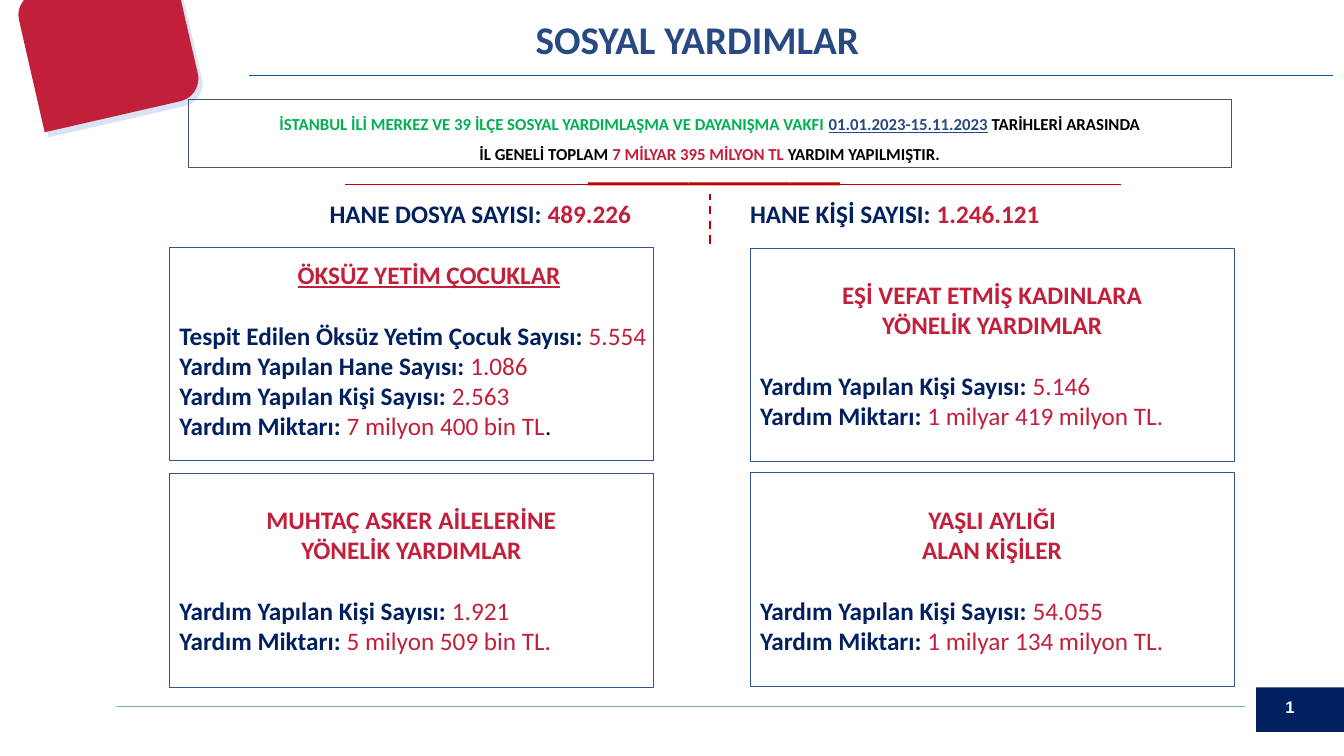
"""Build the social assistance summary slide."""
from dataclasses import dataclass
from typing import Any

import lxml.etree
import pptx
import pptx.dml.color
import pptx.enum.dml
import pptx.enum.shapes
import pptx.enum.text
import pptx.oxml.ns
import pptx.util

Inches = pptx.util.Inches
Pt = pptx.util.Pt
Shapes = pptx.enum.shapes.MSO_SHAPE
CENTER = pptx.enum.text.PP_ALIGN.CENTER

NAVY, CRIMSON, RED, BLUE = "002060", "C21F3A", "C00000", "294983"
GREEN, BLACK, WHITE, BORDER = "00B050", "000000", "FFFFFF", "325491"


@dataclass
class Span:
    text: str
    color: str
    bold: bool = True
    underline: bool = False


@dataclass
class Line:
    start: tuple[float, float]
    end: tuple[float, float]
    color: str
    width: float
    dashed: bool = False


@dataclass
class Panel:
    left: float
    top: float
    text_top: float
    text_width: float
    heading: list[str]
    figures: list[tuple[str, str]]
    underline: bool = False
    full_stop: bool = False


def rgb(color: str) -> pptx.dml.color.RGBColor:
    """Turn a hex string into a colour."""
    return pptx.dml.color.RGBColor.from_string(color)


def add_block(page: Any, kind: Any, left: float, top: float, width: float, height: float,
              fill: str | None = None, line: str | None = None, weight: float = 0.5) -> Any:
    """Draw a preset shape with an optional fill and outline."""
    block = page.shapes.add_shape(kind, Inches(left), Inches(top), Inches(width), Inches(height))
    block.shadow.inherit = False
    if fill:
        block.fill.solid()
        block.fill.fore_color.rgb = rgb(fill)
    else:
        block.fill.background()
    if line:
        block.line.color.rgb = rgb(line)
        block.line.width = Pt(weight)
    else:
        block.line.fill.background()
    return block


def add_line(page: Any, line: Line) -> None:
    """Draw a straight line without a shadow."""
    connector = page.shapes.add_connector(
        pptx.enum.shapes.MSO_CONNECTOR.STRAIGHT,
        *(Inches(value) for value in (*line.start, *line.end)))
    connector.line.color.rgb = rgb(line.color)
    connector.line.width = Pt(line.width)
    if line.dashed:
        connector.line.dash_style = pptx.enum.dml.MSO_LINE.DASH
    lxml.etree.SubElement(connector._element.spPr, pptx.oxml.ns.qn("a:effectLst"))


def add_para(frame: Any, spans: list[Span], size: float = 18, font: str = "Calibri",
             centered: bool = False, first: bool = False) -> Any:
    """Write one paragraph run by run."""
    para = frame.paragraphs[0] if first else frame.add_paragraph()
    para.alignment = CENTER if centered else pptx.enum.text.PP_ALIGN.LEFT
    for span in spans:
        run = para.add_run()
        run.text = span.text
        run.font.name = font
        run.font.size = Pt(size)
        run.font.bold = span.bold
        run.font.underline = span.underline
        run.font.color.rgb = rgb(span.color)
    return para


def add_text(page: Any, left: float, top: float, width: float, height: float) -> Any:
    """Add a wrapping text box and return its frame."""
    box = page.shapes.add_textbox(Inches(left), Inches(top), Inches(width), Inches(height))
    box.text_frame.word_wrap = True
    return box.text_frame


def add_panel_text(page: Any, panel: Panel) -> None:
    """Write a panel's heading and its figures."""
    rows = len(panel.heading) + len(panel.figures) + 1
    frame = add_text(page, panel.left, panel.text_top, panel.text_width, 0.1 + 0.3 * rows)
    for index, text in enumerate(panel.heading):
        add_para(frame, [Span(text, CRIMSON, underline=panel.underline)],
                 centered=True, first=index == 0)
    for index, (label, value) in enumerate(panel.figures):
        spans = [Span(label + ": ", NAVY), Span(value, CRIMSON, bold=False)]
        if panel.full_stop and index == len(panel.figures) - 1:
            spans.append(Span(".", BLACK, bold=False))
        para = add_para(frame, spans)
        if index == 0:
            para.space_before = Pt(22)


def add_banner(page: Any) -> None:
    """Draw the framed summary under the title."""
    banner = add_block(page, Shapes.RECTANGLE, 1.87, 0.98, 10.34, 0.68, line="44546A", weight=0.25)
    frame = banner.text_frame
    frame.word_wrap = True
    frame.vertical_anchor = pptx.enum.text.MSO_ANCHOR.TOP
    rows = [
        [Span("İSTANBUL İLİ MERKEZ VE 39 İLÇE SOSYAL YARDIMLAŞMA VE DAYANIŞMA VAKFI ", GREEN),
         Span("01.01.2023-15.11.2023", BLUE, underline=True),
         Span(" TARİHLERİ ARASINDA", BLACK)],
        [Span("İL GENELİ TOPLAM ", BLACK),
         Span("7 MİLYAR 395 MİLYON TL ", CRIMSON),
         Span("YARDIM YAPILMIŞTIR.", BLACK)],
    ]
    for index, spans in enumerate(rows):
        para = add_para(frame, spans, size=12, centered=True, first=index == 0)
        para.line_spacing = 1.5


PEOPLE, AMOUNT = "Yardım Yapılan Kişi Sayısı", "Yardım Miktarı"
PANELS = [
    Panel(1.68, 2.45, 2.52, 5.15, ["ÖKSÜZ YETİM ÇOCUKLAR"],
          [("Tespit Edilen Öksüz Yetim Çocuk Sayısı", "5.554"),
           ("Yardım Yapılan Hane Sayısı", "1.086"),
           (PEOPLE, "2.563"), (AMOUNT, "7 milyon 400 bin TL")],
          underline=True, full_stop=True),
    Panel(1.68, 4.7, 4.95, 4.8, ["MUHTAÇ ASKER AİLELERİNE", "YÖNELİK YARDIMLAR"],
          [(PEOPLE, "1.921"), (AMOUNT, "5 milyon 509 bin TL.")]),
    Panel(7.44, 2.46, 2.72, 4.8, ["EŞİ VEFAT ETMİŞ KADINLARA", "YÖNELİK YARDIMLAR"],
          [(PEOPLE, "5.146"), (AMOUNT, "1 milyar 419 milyon TL.")]),
    Panel(7.44, 4.69, 4.95, 4.8, ["YAŞLI AYLIĞI", "ALAN KİŞİLER"],
          [(PEOPLE, "54.055"), (AMOUNT, "1 milyar 134 milyon TL.")]),
]
TOTALS = [(3.17, "HANE DOSYA SAYISI: ", "489.226"), (7.34, "HANE KİŞİ SAYISI: ", "1.246.121")]


def main() -> None:
    """Assemble and save the deck."""
    deck = pptx.Presentation()
    deck.slide_width, deck.slide_height = Inches(13.33), Inches(7.5)
    page = deck.slides.add_slide(deck.slide_layouts[6])

    add_line(page, Line((1.15, 7.01), (12.35, 7.01), "81ABB8", 0.75))
    add_block(page, Shapes.RECTANGLE, 12.46, 6.82, 0.87, 0.44, fill=NAVY)
    add_para(add_text(page, 12.65, 6.86, 0.68, 0.3), [Span("1", WHITE)],
             size=12, font="Arial", first=True)
    add_line(page, Line((2.47, 0.75), (13.22, 0.75), "005AAA", 1))

    for left, top, color in ((0.31, -0.17, "DAE3F3"), (0.27, -0.22, CRIMSON)):
        corner = add_block(page, Shapes.ROUND_2_DIAG_RECTANGLE, left, top, 1.61, 1.37, fill=color)
        corner.rotation = 347.1

    for index in range(5):
        add_block(page, Shapes.RECTANGLE, 5.83 + 0.5 * index, 1.81, 0.5, 0.03, fill=RED)
    add_line(page, Line((3.42, 1.83), (11.12, 1.83), RED, 0.5))
    add_line(page, Line((7.04, 2.42), (7.04, 1.92), RED, 1.5, dashed=True))

    for left, label, value in TOTALS:
        add_para(add_text(page, left, 1.92, 3.65, 0.4),
                 [Span(label, NAVY), Span(value, CRIMSON)], first=True)
    for panel in PANELS:
        add_block(page, Shapes.RECTANGLE, panel.left, panel.top, 4.8, 2.12, line=BORDER)
    for panel in PANELS:
        add_panel_text(page, panel)

    add_para(add_text(page, 1.55, 0.1, 10.73, 0.57), [Span("SOSYAL YARDIMLAR", BLUE)],
             size=28, centered=True, first=True)
    add_banner(page)
    deck.save("out.pptx")


if __name__ == "__main__":
    main()
